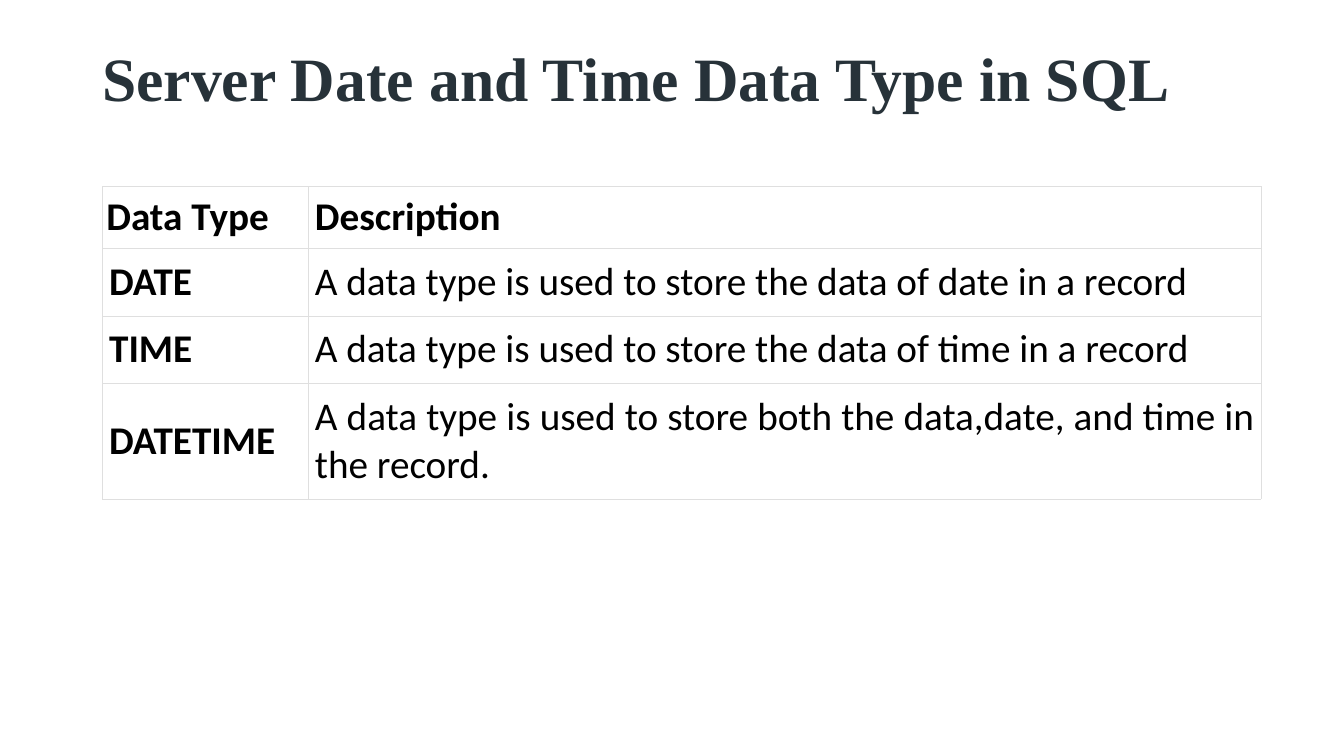
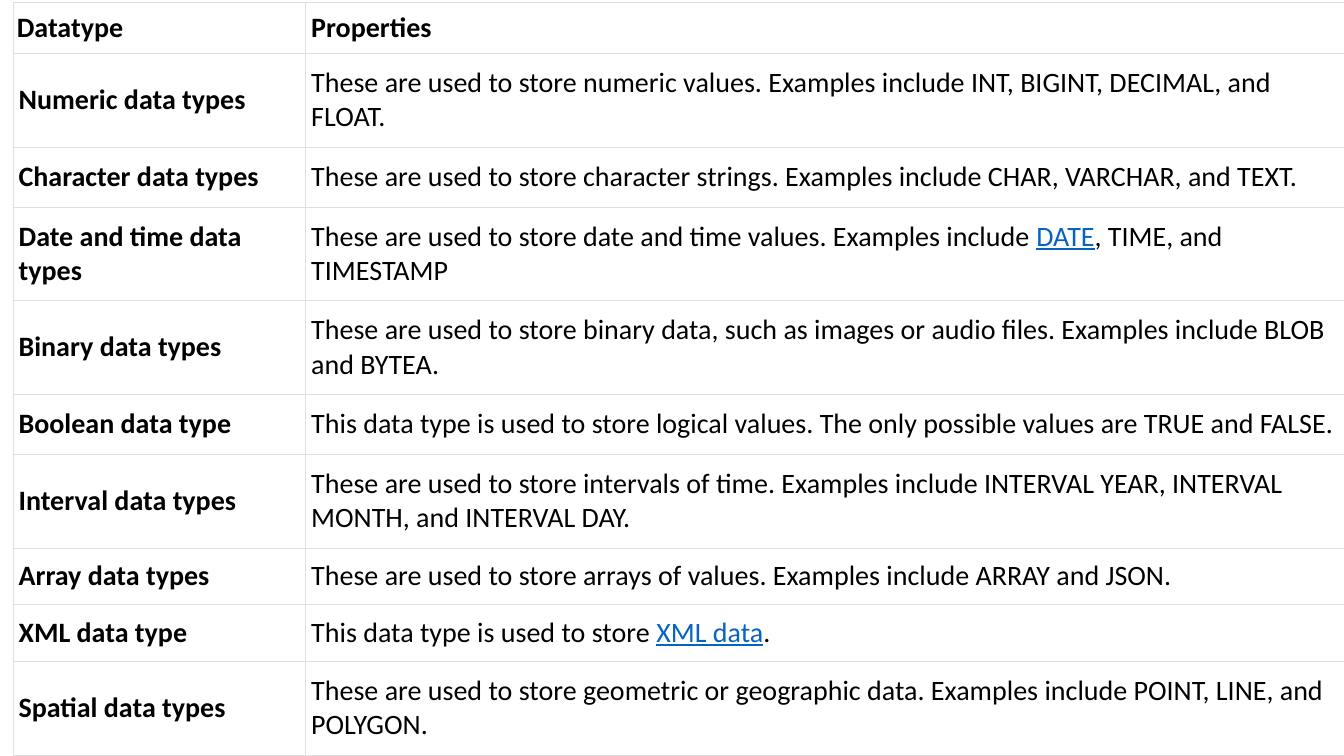
from pptx import Presentation
from pptx.dml.color import RGBColor
from pptx.enum.text import MSO_ANCHOR, PP_ALIGN
from pptx.oxml import parse_xml
from pptx.oxml.ns import nsdecls
from pptx.util import Pt

BLACK = RGBColor(0x00, 0x00, 0x00)
WHITE = RGBColor(0xFF, 0xFF, 0xFF)
SLATE = RGBColor(0x27, 0x32, 0x39)
LINK_BLUE = RGBColor(0x05, 0x63, 0xC1)
BORDER_GREY = RGBColor(0xDF, 0xDF, 0xDF)
BORDER_WIDTH = Pt(0.15)
HEADER_LEFT_INSET = 3

TITLE = "Server Date and Time Data Type in SQL"

DATE_TIME_TABLE = {
    "left": 73, "top": 133, "columns": (147, 681), "size": 28,
    "side_inset": 5, "header_inset": 5, "body_inset": 7, "align": PP_ALIGN.JUSTIFY,
    "rows": [
        (44.3, "Data Type", "Description"),
        (48.3, "DATE", "A data type is used to store the data of date in a record"),
        (48.3, "TIME", "A data type is used to store the data of time in a record"),
        (82.4, "DATETIME", "A data type is used to store both the data,date, and time in the record."),
    ],
}

# Text between bars is shown as a link.
DATATYPE_TABLE = {
    "left": 9, "top": 1.5, "columns": (209, 742), "size": 20,
    "side_inset": 4.3, "header_inset": 4.3, "body_inset": 5.8, "align": PP_ALIGN.LEFT,
    "rows": [
        (36.5, "Datatype", "Properties"),
        (67, "Numeric data types",
         "These are used to store numeric values. Examples include INT, BIGINT, DECIMAL, and FLOAT."),
        (42.7, "Character data types",
         "These are used to store character strings. Examples include CHAR, VARCHAR, and TEXT."),
        (67, "Date and time data types",
         "These are used to store date and time values. Examples include |DATE|, TIME, and TIMESTAMP"),
        (67, "Binary data types",
         "These are used to store binary data, such as images or audio files. "
         "Examples include BLOB and BYTEA."),
        (42.7, "Boolean data type",
         "This data type is used to store logical values. The only possible values are TRUE and FALSE."),
        (67, "Interval data types",
         "These are used to store intervals of time. "
         "Examples include INTERVAL YEAR, INTERVAL MONTH, and INTERVAL DAY."),
        (40.4, "Array data types",
         "These are used to store arrays of values. Examples include ARRAY and JSON."),
        (40.4, "XML data type", "This data type is used to store |XML data|."),
        (67, "Spatial data types",
         "These are used to store geometric or geographic data. "
         "Examples include POINT, LINE, and POLYGON."),
    ],
}


def set_font(font, name, size, color, bold):
    font.name = name
    font.size = Pt(size)
    font.color.rgb = color
    font.bold = bold


def add_title(page, text):
    box = page.shapes.add_textbox(Pt(66), Pt(29), Pt(828), Pt(59))
    frame = box.text_frame
    frame.word_wrap = True
    frame.vertical_anchor = MSO_ANCHOR.MIDDLE
    para = frame.paragraphs[0]
    para.text = text
    para.line_spacing = 0.9
    set_font(para.font, "Times New Roman", 44, SLATE, True)


def add_borders(cell):
    properties = cell._tc.get_or_add_tcPr()
    for position, side in enumerate(("lnL", "lnR", "lnT", "lnB")):
        properties.insert(position, parse_xml(
            f'<a:{side} {nsdecls("a")} w="{BORDER_WIDTH}"><a:solidFill>'
            f'<a:srgbClr val="{BORDER_GREY}"/></a:solidFill></a:{side}>'))


def fill_cell(cell, text, design, is_header, is_first):
    cell.fill.solid()
    cell.fill.fore_color.rgb = WHITE
    add_borders(cell)
    cell.vertical_anchor = MSO_ANCHOR.MIDDLE
    narrow = is_header and is_first
    side = Pt(HEADER_LEFT_INSET if narrow else design["side_inset"])
    cell.margin_left = cell.margin_right = side
    edge = Pt(design["header_inset" if is_header else "body_inset"])
    cell.margin_top = cell.margin_bottom = edge
    para = cell.text_frame.paragraphs[0]
    para.alignment = PP_ALIGN.LEFT if is_header else design["align"]
    set_font(para.font, "Calibri", design["size"], BLACK, is_header or is_first)
    for index, part in enumerate(text.split("|")):
        span = para.add_run()
        span.text = part
        if index % 2:
            span.font.color.rgb = LINK_BLUE
            span.font.underline = True


def add_data_table(page, design):
    rows, columns = design["rows"], design["columns"]
    height = sum(row[0] for row in rows)
    table = page.shapes.add_table(
        len(rows), len(columns), Pt(design["left"]), Pt(design["top"]),
        Pt(sum(columns)), Pt(height)).table
    table.first_row = True
    table.horz_banding = False
    for column, width in zip(table.columns, columns):
        column.width = Pt(width)
    for row_index, (row_height, *texts) in enumerate(rows):
        table.rows[row_index].height = Pt(row_height)
        for column_index, text in enumerate(texts):
            fill_cell(table.cell(row_index, column_index), text, design,
                      row_index == 0, column_index == 0)


def main():
    deck = Presentation()
    deck.slide_width, deck.slide_height = Pt(960), Pt(540)
    blank = deck.slide_layouts[6]
    for title, design in ((TITLE, DATE_TIME_TABLE), (None, DATATYPE_TABLE)):
        page = deck.slides.add_slide(blank)
        if title:
            add_title(page, title)
        add_data_table(page, design)
    deck.save("out.pptx")


if __name__ == "__main__":
    main()
